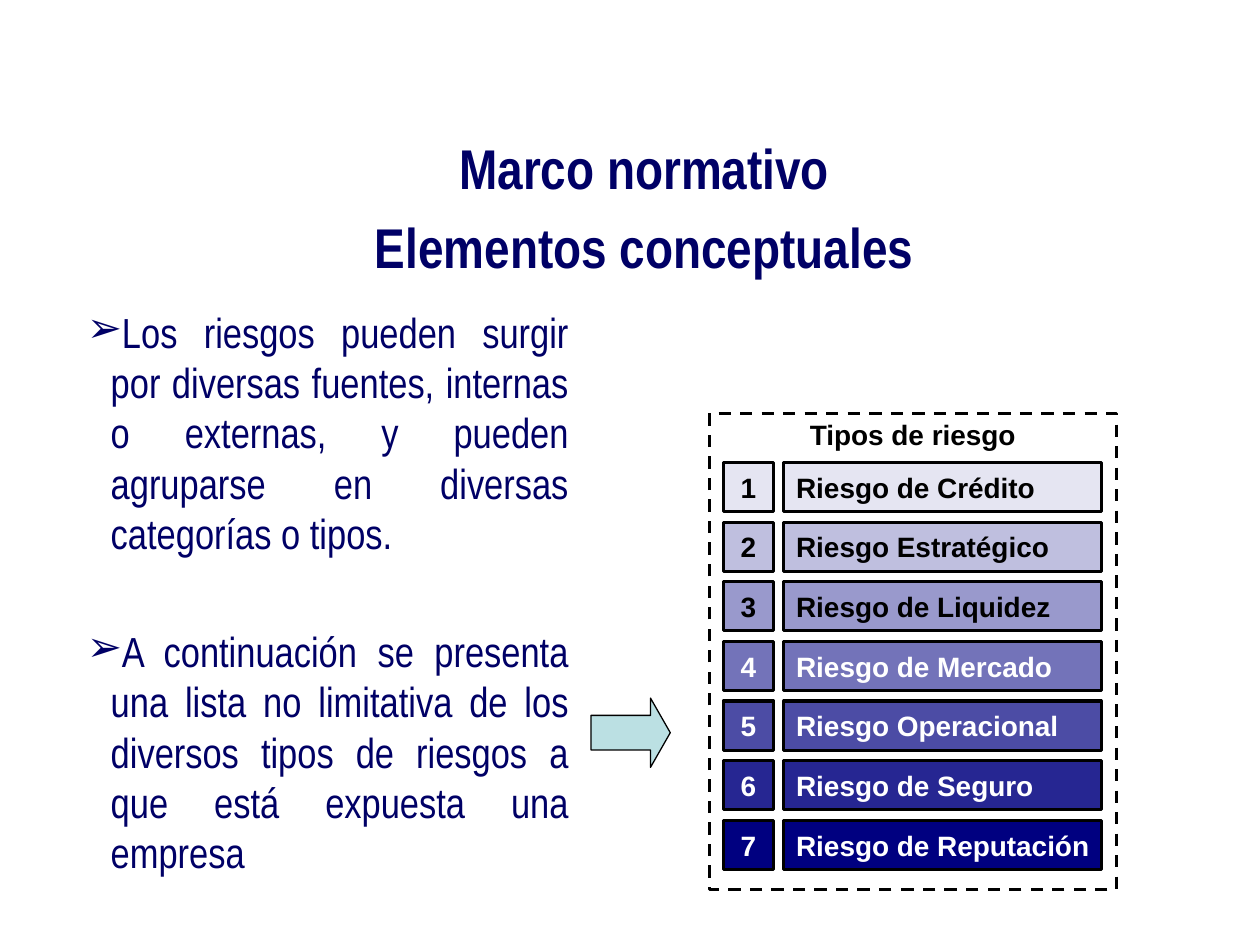
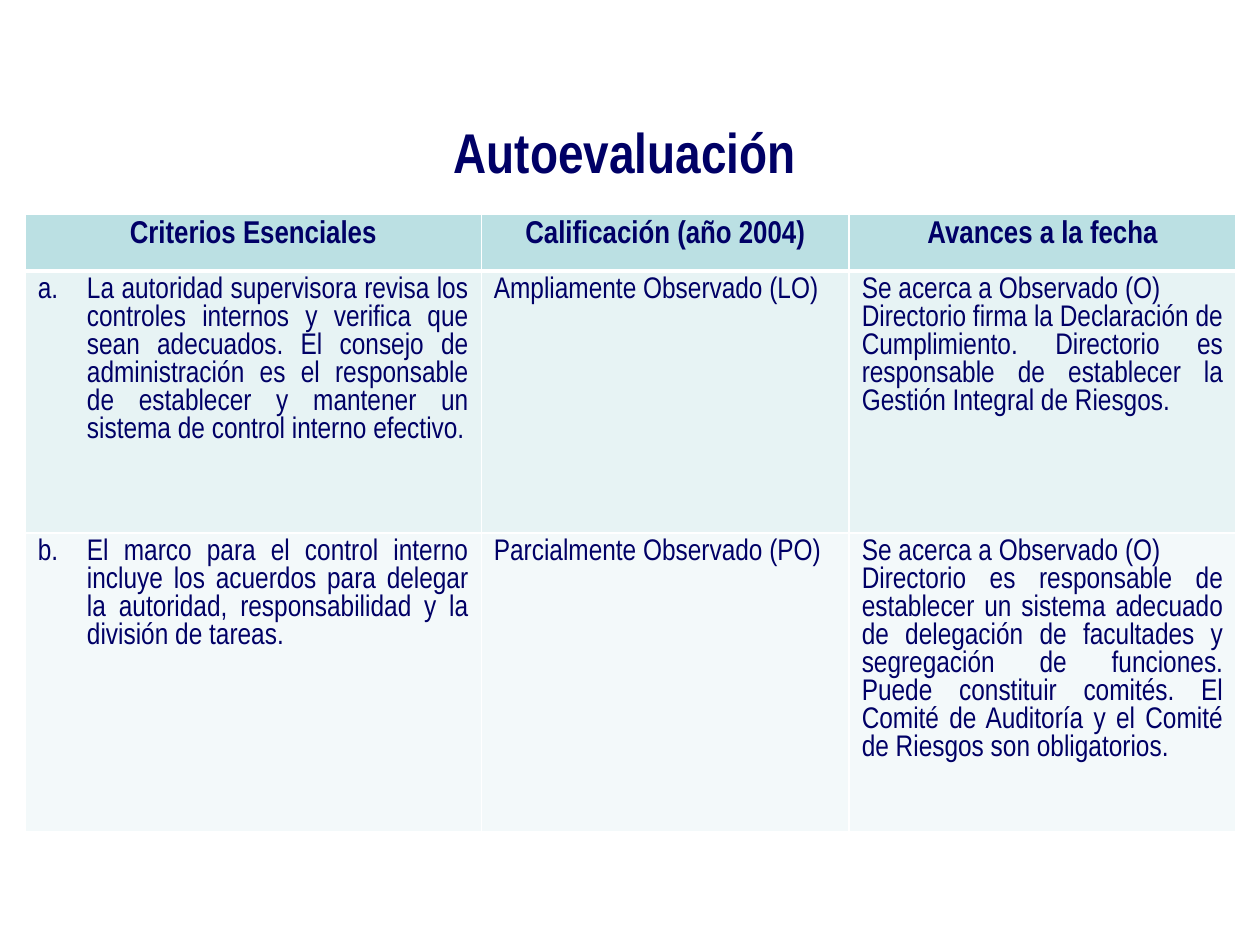
import pptx
import pptx.util
from lxml import etree
from pptx.dml.color import RGBColor
from pptx.enum.dml import MSO_LINE
from pptx.enum.shapes import MSO_SHAPE
from pptx.enum.text import MSO_ANCHOR, MSO_AUTO_SIZE, PP_ALIGN
from pptx.oxml.ns import qn
from pptx.util import Inches, Pt

NAVY = RGBColor(0x00, 0x00, 0x66)
RISK_BLUE = RGBColor(0x00, 0x00, 0x80)
AQUA = RGBColor(0xBB, 0xE0, 0xE3)
AQUA_LIGHT = RGBColor(0xE7, 0xF3, 0xF4)
AQUA_PALE = RGBColor(0xF3, 0xF9, 0xFA)
BLACK = RGBColor(0, 0, 0)
WHITE = RGBColor(0xFF, 0xFF, 0xFF)

BODY_FONT = "Arial Narrow"
LABEL_FONT = "Arial"

RISKS = ["Riesgo de Crédito", "Riesgo Estratégico", "Riesgo de Liquidez",
         "Riesgo de Mercado", "Riesgo Operacional", "Riesgo de Seguro",
         "Riesgo de Reputación"]

RISK_NOTES = [
    "Los riesgos pueden surgir por diversas fuentes, internas o externas, "
    "y pueden agruparse en diversas categorías o tipos.",
    "A continuación se presenta una lista no limitativa de los diversos "
    "tipos de riesgos a que está expuesta una empresa",
]

HEADERS = ["Criterios Esenciales", "Calificación (año 2004)", "Avances a la fecha"]
CRITERIA = [
    ["La autoridad supervisora revisa los controles internos y verifica que "
     "sean adecuados. El consejo de administración es el responsable de "
     "establecer y mantener un sistema de control interno efectivo.",
     "Ampliamente Observado (LO)",
     "Se acerca a Observado (O)\nDirectorio firma la Declaración de "
     "Cumplimiento. Directorio es responsable de establecer la Gestión "
     "Integral de Riesgos."],
    ["El marco para el control interno incluye los acuerdos para delegar la "
     "autoridad, responsabilidad y la división de tareas.",
     "Parcialmente Observado (PO)",
     "Se acerca a Observado (O)\nDirectorio es responsable de establecer un "
     "sistema adecuado de delegación de facultades y segregación de "
     "funciones. Puede constituir comités. El Comité de Auditoría y el "
     "Comité de Riesgos son obligatorios."],
]


def style(paragraph, size, color, align, bold=False, font=BODY_FONT):
    paragraph.alignment = align
    paragraph.font.name = font
    paragraph.font.size = Pt(size)
    paragraph.font.bold = bold
    paragraph.font.color.rgb = color


def add_marker(paragraph, indent, tag, **attributes):
    """Hang the paragraph by indent behind a bullet or number."""
    properties = paragraph._p.get_or_add_pPr()
    properties.set("marL", str(indent))
    properties.set("indent", str(-indent))
    etree.SubElement(properties, qn("a:buFont"), typeface=BODY_FONT)
    etree.SubElement(properties, qn(tag), attributes)


def place_heading(heading, text, left, top, width):
    heading.left, heading.top = Inches(left), Inches(top)
    heading.width, heading.height = Inches(width), Inches(0.63)
    frame = heading.text_frame
    frame.word_wrap = True
    frame.auto_size = MSO_AUTO_SIZE.NONE
    frame.vertical_anchor = MSO_ANCHOR.TOP
    frame.text = text
    style(frame.paragraphs[0], 32, NAVY, PP_ALIGN.CENTER, bold=True)


def new_slide(deck, title, left, top, width):
    slide = deck.slides.add_slide(deck.slide_layouts[5])
    place_heading(slide.shapes.title, title, left, top, width)
    return slide


def add_notes_list(slide, left, top, width, height):
    frame = slide.shapes.add_textbox(left, top, width, height).text_frame
    frame.word_wrap = True
    frame.text = "\n".join(RISK_NOTES)
    for paragraph in frame.paragraphs:
        add_marker(paragraph, Inches(0.19), "a:buChar", char="➢")
        style(paragraph, 24, NAVY, PP_ALIGN.JUSTIFY)
    frame.paragraphs[1].space_before = Pt(38.4)


def add_label_box(slide, text, left, top, width, height, color, align):
    box = slide.shapes.add_shape(MSO_SHAPE.RECTANGLE, left, top, width, height)
    box.shadow.inherit = False
    box.line.color.rgb = BLACK
    box.line.width = Pt(1.75)
    frame = box.text_frame
    frame.word_wrap = False
    frame.vertical_anchor = MSO_ANCHOR.MIDDLE
    frame.text = text
    style(frame.paragraphs[0], 16, color, align, bold=True, font=LABEL_FONT)
    return box


def fill_risk_blue(box, opacity):
    box.fill.solid()
    box.fill.fore_color.rgb = RISK_BLUE
    if opacity < 100:
        color = box._element.spPr.find(qn("a:solidFill"))[0]
        etree.SubElement(color, qn("a:alpha"), val=str(opacity * 1000))


def add_risk_panel(slide, left, top, width, height):
    """Dashed frame with a heading and one numbered, ever darker row per risk."""
    row_height, pitch = Inches(0.39), Inches(2.84) // 6
    for index, risk in enumerate(RISKS):
        row_top = top + Inches(0.39) + index * pitch
        color = BLACK if index < 3 else WHITE
        for text, offset, box_width, align in (
                (risk, 0.59, 2.52, PP_ALIGN.LEFT),
                (str(index + 1), 0.11, 0.4, PP_ALIGN.CENTER)):
            box = add_label_box(slide, text, left + Inches(offset), row_top,
                                Inches(box_width), row_height, color, align)
            fill_risk_blue(box, 10 + 15 * index)
    panel = add_label_box(slide, "Tipos de riesgo", left, top, width, height,
                          BLACK, PP_ALIGN.CENTER)
    panel.fill.background()
    panel.line.dash_style = MSO_LINE.DASH
    panel.text_frame.vertical_anchor = MSO_ANCHOR.TOP
    panel.text_frame.margin_top = Inches(0.03)


def add_arrow(slide, left, top, width, height):
    arrow = slide.shapes.add_shape(MSO_SHAPE.RIGHT_ARROW, left, top, width, height)
    arrow.shadow.inherit = False
    arrow.adjustments[1] = 0.285
    arrow.fill.solid()
    arrow.fill.fore_color.rgb = AQUA
    arrow.line.color.rgb = BLACK
    arrow.line.width = Pt(0.75)


def build_risk_slide(deck):
    slide = new_slide(deck, "Marco normativo", 0.45, 1.01, 9.33)
    subtitle = slide.shapes.add_textbox(0, 0, 0, 0)
    place_heading(subtitle, "Elementos conceptuales", 0.45, 1.64, 9.33)
    add_notes_list(slide, Inches(0.59), Inches(2.38), Inches(4.02), Inches(5.2))
    add_risk_panel(slide, Inches(5.63), Inches(3.28), Inches(3.23), Inches(3.78))
    add_arrow(slide, Inches(4.69), Inches(5.54), Inches(0.63), Inches(0.55))


def set_borders(cell, top, bottom):
    """White borders, with the given top and bottom widths in points."""
    properties = cell._tc.get_or_add_tcPr()
    for side, width in (("L", 1), ("R", 1), ("T", top), ("B", bottom)):
        line = etree.SubElement(properties, qn(f"a:ln{side}"), w=str(Pt(width)))
        fill = etree.SubElement(line, qn("a:solidFill"))
        etree.SubElement(fill, qn("a:srgbClr"), val=str(WHITE))


def add_criteria_table(slide, left, top, width, height):
    rows = [HEADERS] + CRITERIA
    table = slide.shapes.add_table(len(rows), len(HEADERS), left, top,
                                   width, height).table
    for column, column_width in zip(table.columns, (3.62, 2.92, 3.07)):
        column.width = Inches(column_width)
    for row, row_height in zip(table.rows, (0.45, 2.08, 2.37)):
        row.height = Inches(row_height)
    for r, (texts, fill) in enumerate(zip(rows, (AQUA, AQUA_LIGHT, AQUA_PALE))):
        is_header = r == 0
        for c, text in enumerate(texts):
            cell = table.cell(r, c)
            set_borders(cell, 3 if r == 1 else 1, 3 if is_header else 1)
            cell.fill.solid()
            cell.fill.fore_color.rgb = fill
            cell.text = text
            for paragraph in cell.text_frame.paragraphs:
                if c == 0 and not is_header:
                    add_marker(paragraph, Inches(0.39), "a:buAutoNum",
                               type="alphaLcPeriod", startAt=str(r))
                style(paragraph, 18 if is_header else 17, NAVY,
                      PP_ALIGN.CENTER if is_header else PP_ALIGN.JUSTIFY,
                      bold=is_header)


def build_assessment_slide(deck):
    slide = new_slide(deck, "Autoevaluación", 0.7, 0.88, 8.52)
    add_criteria_table(slide, Inches(0.2), Inches(1.7), Inches(9.61), Inches(4.9))


def main():
    deck = pptx.Presentation()
    deck.slide_width, deck.slide_height = Inches(10), Inches(7.5)
    build_risk_slide(deck)
    build_assessment_slide(deck)
    deck.save("out.pptx")


if __name__ == "__main__":
    main()
